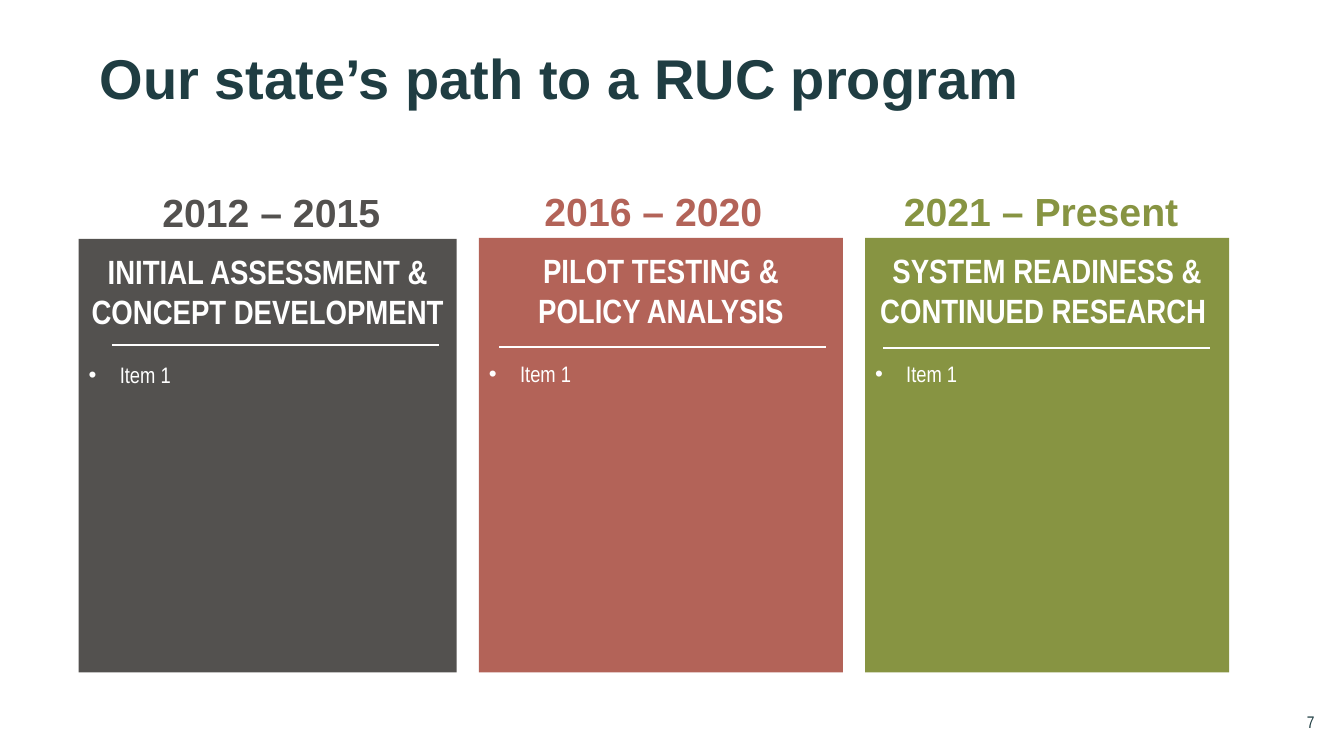
from dataclasses import dataclass

from lxml.etree import SubElement
from pptx import Presentation
from pptx.dml.color import RGBColor
from pptx.enum.shapes import MSO_CONNECTOR, MSO_SHAPE
from pptx.enum.text import MSO_ANCHOR as ANCHOR, MSO_AUTO_SIZE, PP_ALIGN as ALIGN
from pptx.oxml.ns import qn
from pptx.util import Inches, Pt

COLORS = {
    "ink": "1F3D42",
    "white": "FFFFFF",
    "assessment": "53514F",
    "pilot": "B36358",
    "readiness": "879442",
}
HEADING_FONT, BODY_FONT = "Arial", "Arial Narrow"


@dataclass
class Phase:
    years: str
    heading: str
    items: list
    color: str
    box: tuple    # left, top, width, height of the panel
    label: tuple  # left offset and width of the years
    rule: tuple   # left and top offset of the divider


PHASES = [
    Phase("2012 – 2015", "INITIAL ASSESSMENT & CONCEPT DEVELOPMENT", ["Item 1"],
          "assessment", (0.78, 2.37, 3.75, 4.3), (0.66, 2.5), (0.33, 1.05)),
    Phase("2016 – 2020", "PILOT TESTING & POLICY ANALYSIS", ["Item 1"],
          "pilot", (4.75, 2.36, 3.61, 4.31), (0.48, 2.5), (0.2, 1.08)),
    Phase("2021 – Present", "SYSTEM READINESS & CONTINUED RESEARCH ", ["Item 1"],
          "readiness", (8.58, 2.36, 3.61, 4.31), (0.24, 3.01), (0.18, 1.09)),
]


def rgb(name):
    return RGBColor.from_string(COLORS[name])


def write(paragraph, text, size, color, font, bold=False, align=ALIGN.LEFT):
    paragraph.alignment = align
    run = paragraph.add_run()
    run.text = text
    run.font.size = Pt(size)
    run.font.name = font
    run.font.bold = bold
    run.font.color.rgb = rgb(color)


def add_bullet(paragraph, indent):
    props = paragraph._p.get_or_add_pPr()
    props.set("marL", str(Inches(indent)))
    props.set("indent", str(-Inches(indent)))
    SubElement(props, qn("a:buFont")).set("typeface", "Arial")
    SubElement(props, qn("a:buChar")).set("char", "•")


def add_title(slide, text, box):
    title = slide.shapes.title
    title.left, title.top, title.width, title.height = map(Inches, box)
    frame = title.text_frame
    frame.word_wrap = True
    frame.auto_size = MSO_AUTO_SIZE.NONE
    frame.vertical_anchor = ANCHOR.BOTTOM
    heading = frame.paragraphs[0]
    heading.line_spacing = 0.9
    write(heading, text, 40, "ink", HEADING_FONT, bold=True)


def add_page_number(slide, number, box):
    frame = slide.shapes.add_textbox(*map(Inches, box)).text_frame
    frame.word_wrap = True
    frame.vertical_anchor = ANCHOR.MIDDLE
    write(frame.paragraphs[0], number, 12, "ink", BODY_FONT, align=ALIGN.CENTER)


def add_phase(slide, phase, box):
    left, top, width, height = box
    group = slide.shapes.add_group_shape().shapes

    # Panel with heading and items
    panel = group.add_shape(MSO_SHAPE.RECTANGLE, *map(Inches, box))
    panel.shadow.inherit = False
    panel.fill.solid()
    panel.fill.fore_color.rgb = rgb(phase.color)
    panel.line.fill.background()
    frame = panel.text_frame
    frame.word_wrap = True
    frame.vertical_anchor = ANCHOR.TOP
    frame.margin_top = Inches(0.12)
    write(frame.paragraphs[0], phase.heading, 24, "white", BODY_FONT,
          bold=True, align=ALIGN.CENTER)
    for index, text in enumerate(phase.items):
        item = frame.add_paragraph()
        item.space_before = Pt(0 if index else 21)
        write(item, text, 16, "white", BODY_FONT)
        add_bullet(item, 0.31)

    # Years above the panel
    label_left, label_width = phase.label
    label = group.add_textbox(Inches(left + label_left), Inches(top - 0.64),
                              Inches(label_width), Inches(0.84))
    label.text_frame.word_wrap = True
    years = label.text_frame.paragraphs[0]
    years.line_spacing = 1.2
    years.space_after = Pt(12)
    write(years, phase.years, 28, phase.color, HEADING_FONT,
          bold=True, align=ALIGN.CENTER)

    # Divider under the heading
    start, y = Inches(left + phase.rule[0]), Inches(top + phase.rule[1])
    divider = group.add_connector(MSO_CONNECTOR.STRAIGHT, start, y,
                                  start + Inches(3.24), y)
    divider.line.color.rgb = rgb("white")
    divider.line.width = Pt(1.5)
    SubElement(divider._element.spPr, qn("a:effectLst"))


def main():
    deck = Presentation()
    deck.slide_width, deck.slide_height = Inches(13.33), Inches(7.5)
    slide = deck.slides.add_slide(deck.slide_layouts[5])
    add_title(slide, "Our state’s path to a RUC program", (0.89, 0.46, 10.16, 0.7))
    for phase in PHASES:
        add_phase(slide, phase, phase.box)
    add_page_number(slide, "7", (12.44, 6.96, 1.12, 0.4))
    deck.save("out.pptx")


if __name__ == "__main__":
    main()
